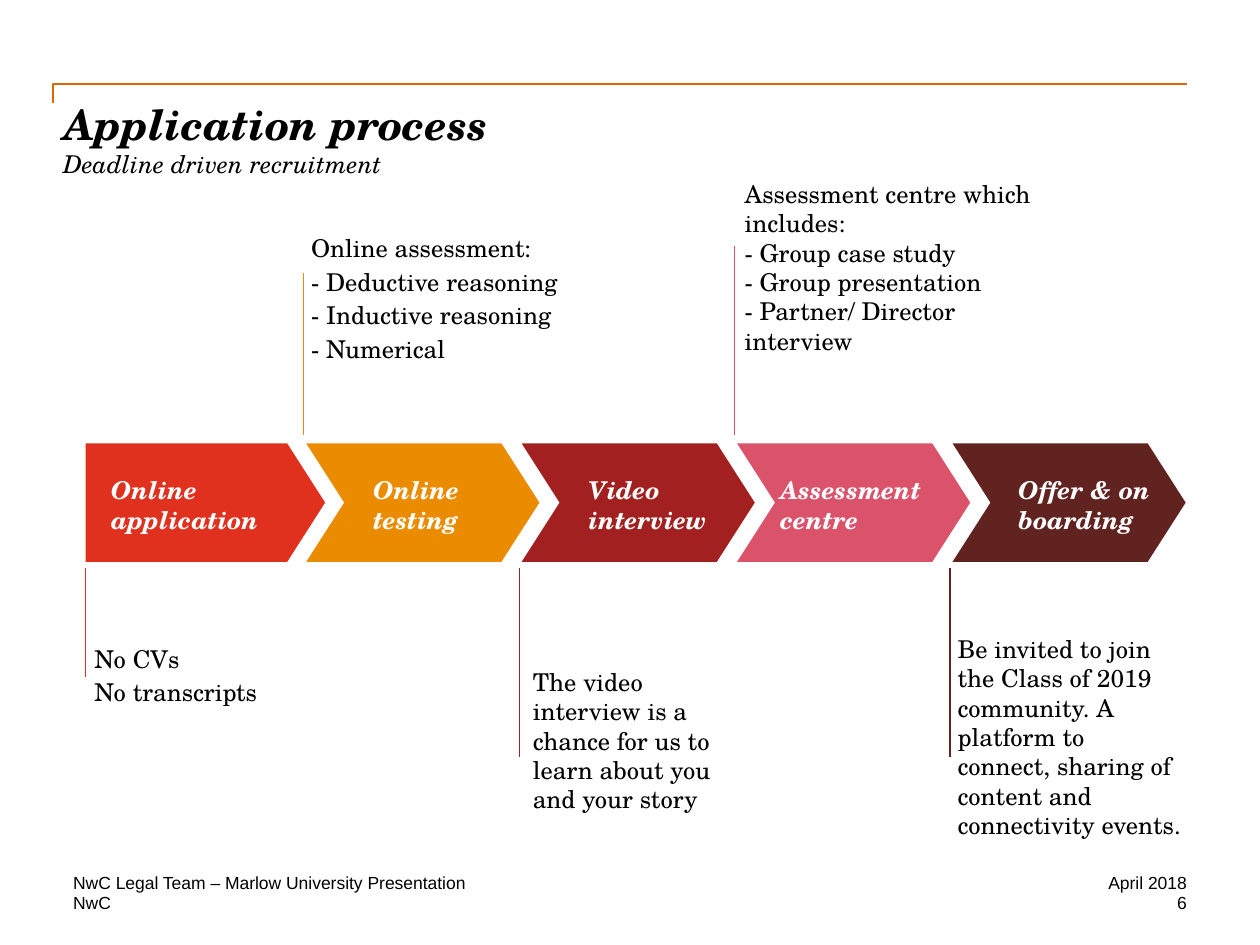
import pptx
import pptx.util
import pptx.dml.color
import pptx.enum.shapes
import pptx.enum.text
import pptx.oxml

Pt = pptx.util.Pt
Kind = pptx.enum.shapes.MSO_SHAPE
Align = pptx.enum.text.PP_ALIGN
Anchor = pptx.enum.text.MSO_ANCHOR


def hue(code):
    return pptx.dml.color.RGBColor.from_string(code)


def write(box, paras, inset, look, color="000000", gap=0, align=Align.LEFT, anchor=Anchor.TOP):
    frame = box.text_frame
    left, top, right, bottom = map(Pt, inset)
    form = {"word_wrap": True, "vertical_anchor": anchor,
            "margin_left": left, "margin_top": top,
            "margin_right": right, "margin_bottom": bottom}
    for key, value in form.items():
        setattr(frame, key, value)
    frame.text = "\n".join(paras)
    for i, para in enumerate(frame.paragraphs):
        para.alignment = align
        para.space_before = Pt(gap if i else 0)
        for run in para.runs:
            for key, value in look.items():
                setattr(run.font, key, value)
            run.font.color.rgb = hue(color)


serif = "TeX Gyre Schola"
body = {"name": serif, "size": Pt(14), "bold": False, "italic": False}
label = {**body, "bold": True, "italic": True}
small = {"name": "Arial", "size": Pt(10)}

deck = pptx.Presentation()
deck.slide_width, deck.slide_height = Pt(720), Pt(540)
slide = deck.slides.add_slide(deck.slide_layouts[5])
shapes = slide.shapes

path = shapes.build_freeform(Pt(30.2), Pt(59), scale=1.0)
path.add_line_segments([(Pt(30.2), Pt(48.2)), (Pt(678.2), Pt(48.2))], close=False)
rule = path.convert_to_shape()
rule.shadow.inherit = False
rule.fill.background()
rule.line.color.rgb = hue("DC6900")
rule.line.width = Pt(1)

title = shapes.title
place = {"left": 28.8, "top": 49, "width": 635.8, "height": 72}
for key, value in place.items():
    setattr(title, key, Pt(value))
write(title, ["Application process\vDeadline driven recruitment"], [7.2] * 4, label)
head, sub = title.text_frame.paragraphs[0].runs
head.font.size = Pt(24)
sub.font.bold = False

start, step, top = 49, 123.1, 253.4
steps = [
    ("Online application", "E0301E", 57.6, 96.5, 386.6),
    ("Online testing", "EB8C00", 207.4, 88.6, 156.2),
    ("Video interview", "A32020", 330.5, 88.6, 432.7),
    ("Assessment centre", "DB536A", 439.9, 102.2, 140.4),
    ("Offer & on boarding", "602320", 576, 88.6, 432.7),
]
for i, (name, color, left, width, end) in enumerate(steps):
    edge = start + i * step
    if i:
        arrow = shapes.add_shape(Kind.CHEVRON, Pt(edge + 2.9), Pt(top), Pt(133.2), Pt(67.7))
    else:
        arrow = shapes.add_shape(Kind.PENTAGON, Pt(edge), Pt(top), Pt(136.8), Pt(67.7))
    arrow.adjustments[0] = 0.32
    arrow.shadow.inherit = False
    arrow.fill.solid()
    arrow.fill.fore_color.rgb = hue(color)
    arrow.line.fill.background()

    box = shapes.add_textbox(Pt(left), Pt(265.8), Pt(width), Pt(41))
    write(box, [name], (5.8, 5.8, 5, 5.8), label, "FFFFFF")

    stem = edge + (1.5 if i else 0)
    begin = 248.4 if end < top else 324.7
    line = shapes.add_connector(pptx.enum.shapes.MSO_CONNECTOR.STRAIGHT,
                                Pt(stem), Pt(begin), Pt(stem), Pt(end))
    line.line.color.rgb = hue(color)
    line.line.width = Pt(0.75)
    props = line._element.spPr
    props.append(pptx.oxml.parse_xml(
        '<a:effectLst xmlns:a="http://schemas.openxmlformats.org/drawingml/2006/main"/>'))

notes = [
    (49, 367.9, 126.7, 37.4, 5, 2.4, ["No CVs", "No transcripts"]),
    (177.8, 133.2, 154.1, 77, 0, 2.4,
     ["Online assessment:", "- Deductive reasoning", "- Inductive reasoning", "- Numerical"]),
    (299.5, 381, 121.7, 85, 5, 0,
     ["The video interview is a chance for us to learn about you and your story"]),
    (420.5, 102.2, 187.9, 113, 5, 0,
     ["Assessment centre which includes:", "- Group case study",
      "- Group presentation", "- Partner/ Director interview"]),
    (542.2, 362.2, 133.2, 119, 5, 0,
     ["Be invited to join the Class of 2019 community. A platform to connect, "
      "sharing of content and connectivity events."]),
]
for left, y, width, height, pad, gap, paras in notes:
    box = shapes.add_textbox(Pt(left), Pt(y), Pt(width), Pt(height))
    write(box, paras, (pad, 0, 0, 0), body, gap=gap)

foot = [
    (41.8, 498.2, 414, "NwC Legal Team – Marlow University Presentation", Align.LEFT, Anchor.BOTTOM),
    (41.8, 509.8, 203.8, "NwC", Align.LEFT, Anchor.TOP),
    (558, 498.2, 120.2, "April 2018", Align.RIGHT, Anchor.TOP),
    (558, 509.8, 120.2, "6", Align.RIGHT, Anchor.TOP),
]
for left, y, width, words, align, anchor in foot:
    box = shapes.add_textbox(Pt(left), Pt(y), Pt(width), Pt(12.2))
    write(box, [words], [0] * 4, small, align=align, anchor=anchor)

deck.save("out.pptx")
